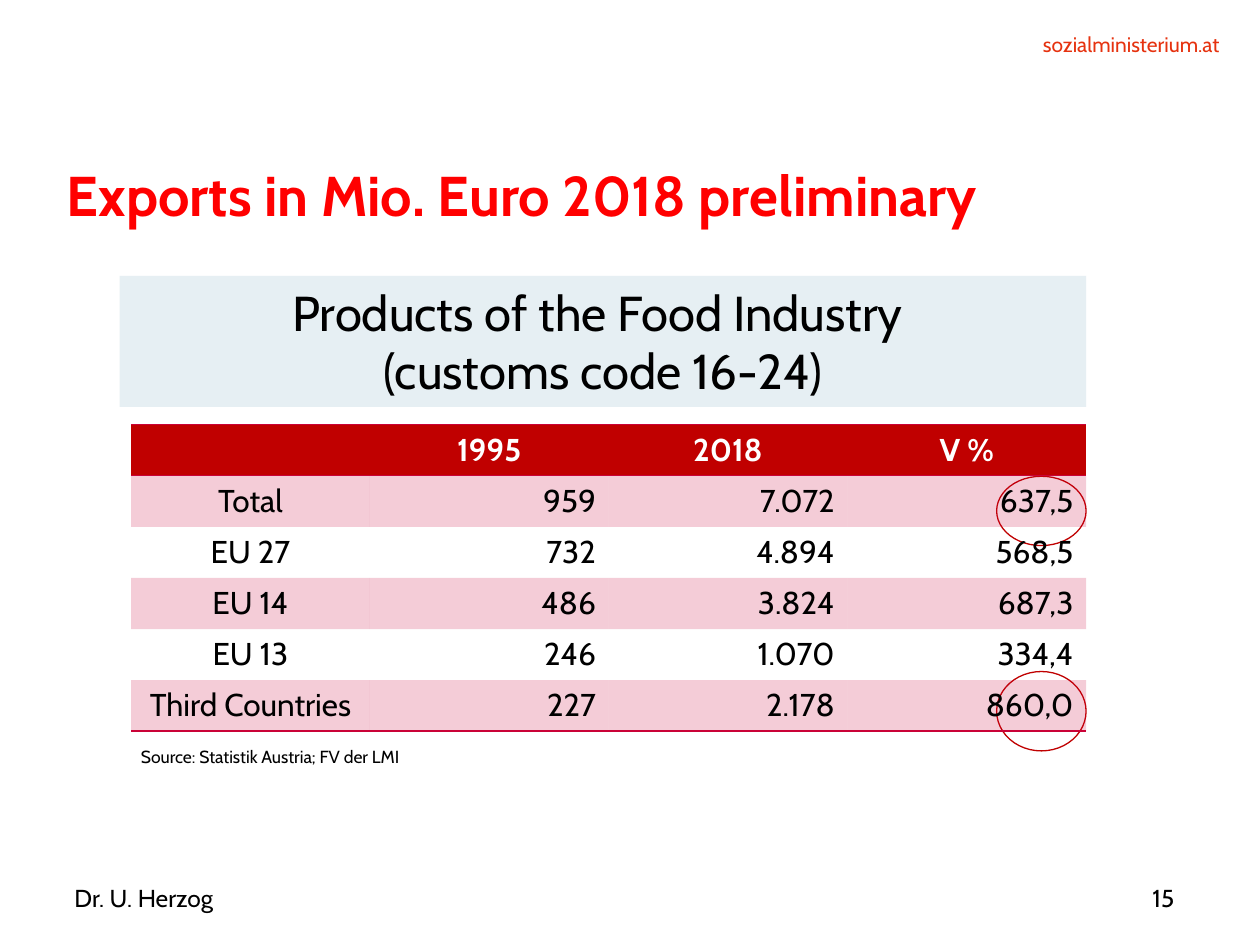
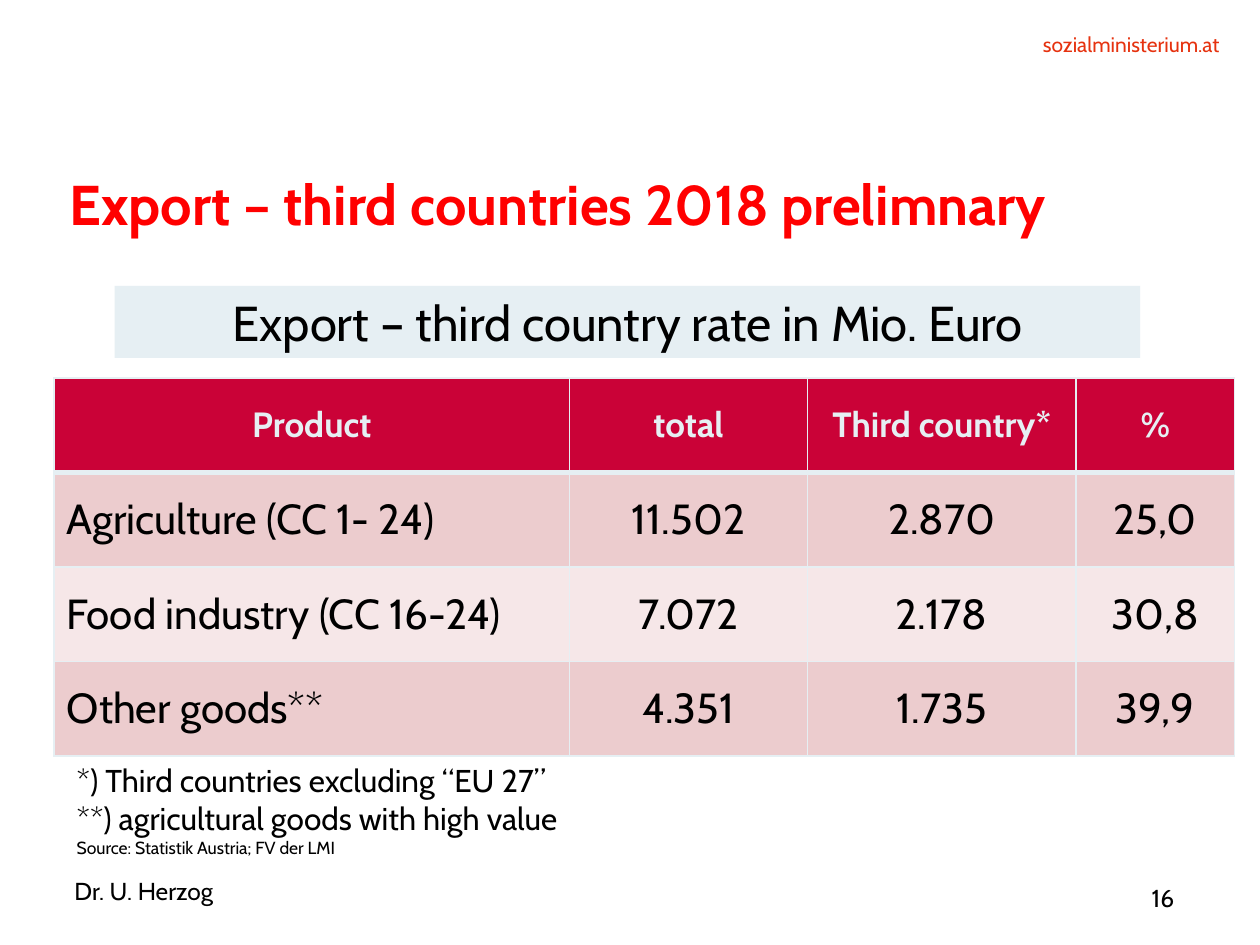
from lxml.etree import SubElement
from pptx import Presentation
from pptx.dml.color import RGBColor
from pptx.enum.shapes import MSO_SHAPE as Shape
from pptx.enum.text import MSO_ANCHOR as Anchor, MSO_AUTO_SIZE as AutoSize, PP_ALIGN as Align
from pptx.oxml.ns import qn
from pptx.util import Inches, Pt

COLORS = {
    "title": "FF0000",
    "web": "E6320F",
    "band": "E6EFF3",
    "dark_red": "C00000",
    "crimson": "CA0237",
    "rose": "ECCCCE",
    "pale_rose": "F6E7E8",
    "black": "000000",
    "white": "FFFFFF",
}
FONT = "Cabin"
NO_TABLE_STYLE = "{2D5ABB26-0587-4C30-8999-92F81FD0307C}"
NO_INSETS = dict.fromkeys(["margin_left", "margin_top", "margin_right", "margin_bottom"], 0)
FOOTER = {**NO_INSETS, "vertical_anchor": Anchor.MIDDLE, "word_wrap": True}
HEADER = {**NO_INSETS, "word_wrap": True}
NOTE = {"word_wrap": False}
SOURCE = ("Source: Statistik Austria; FV der LMI", 10)


def write(frame, lines, color="black", align=Align.LEFT, bold=False, settings={}):
    for name, value in settings.items():
        setattr(frame, name, value)
    for index, (text, size) in enumerate(lines):
        para = frame.add_paragraph() if index else frame.paragraphs[0]
        para.alignment = align
        span = para.add_run()
        span.text = text
        for name, value in {"name": FONT, "size": Pt(size), "bold": bold}.items():
            setattr(span.font, name, value)
        span.font.color.rgb = RGBColor.from_string(COLORS[color])


def style_cell(cell, fill, alpha, borders):
    properties = cell._tc.get_or_add_tcPr()
    for side in "LRTB":
        line = SubElement(properties, qn(f"a:ln{side}"))
        if side in borders:
            color, width = borders[side]
            line.set("w", str(Pt(width)))
            solid = SubElement(line, qn("a:solidFill"))
            SubElement(solid, qn("a:srgbClr"), val=COLORS[color])
        else:
            SubElement(line, qn("a:noFill"))
    if fill is None:
        cell.fill.background()
        return
    cell.fill.solid()
    cell.fill.fore_color.rgb = RGBColor.from_string(COLORS[fill])
    if alpha < 100:
        tint = properties.find(f"{qn('a:solidFill')}/{qn('a:srgbClr')}")
        SubElement(tint, qn("a:alpha"), val=str(alpha * 1000))


slides = [
    {
        "title": "Exports in Mio. Euro 2018 preliminary",
        "title_at": (0.53, 1.39),
        "rings": [(7.91, 3.78, 0.71, 0.55), (7.91, 5.33, 0.71, 0.63)],
        "band": ["Products of the Food Industry ", "(customs code 16-24)"],
        "band_at": (0.95, 2.19, 7.67, 1.04),
        "table_at": (1.04, 3.37),
        "columns": [1.895] * 4,
        "row_height": 0.405,
        "anchor": Anchor.TOP,
        "sizes": (18, 18),
        "head": ("dark_red", "white"),
        "stripes": [("crimson", 20), (None, 100)],
        "aligns": (Align.CENTER, Align.RIGHT),
        "head_borders": {"T": ("crimson", 1), "B": ("crimson", 1)},
        "body_borders": {},
        "last_borders": {"B": ("crimson", 1)},
        "rows": [
            ("", "1995", "2018", "V %"),
            ("Total", "959", "7.072", "637,5"),
            ("EU 27", "732", "4.894", "568,5"),
            ("EU 14", "486", "3.824", "687,3"),
            ("EU 13", "246", "1.070", "334,4"),
            ("Third Countries", "227", "2.178", "860,0"),
        ],
        "notes": [SOURCE],
        "notes_at": (1.02, 5.87, 2.29, 0.27),
        "author_top": 6.98,
        "number": "15",
    },
    {
        "title": "Export – third countries 2018 prelimnary",
        "title_at": (0.55, 1.46),
        "rings": [],
        "band": ["Export – third country rate in Mio. Euro"],
        "band_at": (0.91, 2.27, 8.14, 0.57),
        "table_at": (0.43, 3),
        "columns": [4.09, 1.89, 2.13, 1.26],
        "row_height": 0.75,
        "anchor": Anchor.MIDDLE,
        "sizes": (20, 24),
        "head": ("crimson", "band"),
        "stripes": [("rose", 100), ("pale_rose", 100)],
        "aligns": (Align.LEFT, Align.CENTER),
        "head_borders": {**dict.fromkeys("LRT", ("band", 1)), "B": ("band", 3)},
        "body_borders": dict.fromkeys("LRB", ("band", 1)),
        "last_borders": dict.fromkeys("LRB", ("band", 1)),
        "rows": [
            ("Product", "total", "Third country*", "%"),
            ("Agriculture (CC 1- 24)", "11.502", "2.870", "25,0"),
            ("Food industry (CC 16-24)", "7.072", "2.178", "30,8"),
            ("Other goods**", "4.351", "1.735", "39,9"),
        ],
        "notes": [
            ("*) Third countries excluding “EU 27”", 18),
            ("**) agricultural goods with high value", 18),
            SOURCE,
        ],
        "notes_at": (0.51, 5.99, 4.28, 0.88),
        "author_top": 6.92,
        "number": "16",
    },
]

deck = Presentation()
deck.slide_width, deck.slide_height = Inches(10), Inches(7.5)

for content in slides:
    page = deck.slides.add_slide(deck.slide_layouts[5])

    title = page.shapes.title
    title.left, title.top = map(Inches, content["title_at"])
    title.width, title.height = Inches(8.73), Inches(0.91)
    write(title.text_frame, [(content["title"], 32)], "title", bold=True,
          settings={**NO_INSETS, "vertical_anchor": Anchor.TOP,
                    "word_wrap": False, "auto_size": AutoSize.NONE})
    title.text_frame.paragraphs[0].line_spacing = Pt(30)

    for place in content["rings"]:
        ring = page.shapes.add_shape(Shape.OVAL, *map(Inches, place))
        ring.shadow.inherit = False
        ring.fill.background()
        ring.line.color.rgb = RGBColor.from_string(COLORS["dark_red"])
        ring.line.width = Pt(0.75)

    band = page.shapes.add_shape(Shape.RECTANGLE, *map(Inches, content["band_at"]))
    band.shadow.inherit = False
    band.fill.solid()
    band.fill.fore_color.rgb = RGBColor.from_string(COLORS["band"])
    band.line.fill.background()
    write(band.text_frame, [(line, 28) for line in content["band"]], align=Align.CENTER,
          settings={"vertical_anchor": Anchor.TOP, "word_wrap": True})

    rows, columns = content["rows"], content["columns"]
    left, top = content["table_at"]
    table = page.shapes.add_table(
        len(rows), len(columns), Inches(left), Inches(top),
        Inches(sum(columns)), Inches(content["row_height"] * len(rows))).table
    table._tbl.tblPr.find(qn("a:tableStyleId")).text = NO_TABLE_STYLE
    table.horz_banding = False
    for column, width in zip(table.columns, columns):
        column.width = Inches(width)
    for row_index, row in enumerate(rows):
        table.rows[row_index].height = Inches(content["row_height"])
        is_head = row_index == 0
        if is_head:
            (fill, color), alpha = content["head"], 100
            borders = content["head_borders"]
        else:
            fill, alpha = content["stripes"][(row_index - 1) % 2]
            color = "black"
            is_last = row_index == len(rows) - 1
            borders = content["last_borders" if is_last else "body_borders"]
        size = content["sizes"][0 if is_head else 1]
        for column_index, text in enumerate(row):
            cell = table.cell(row_index, column_index)
            style_cell(cell, fill, alpha, borders)
            cell.vertical_anchor = content["anchor"]
            align = Align.CENTER if is_head else content["aligns"][min(column_index, 1)]
            write(cell.text_frame, [(text, size)], color, align, is_head)

    labels = [
        ((7.27, 0.25, 2.41, 0.2), [("sozialministerium.at", 12)], "web", Align.RIGHT, HEADER),
        (content["notes_at"], content["notes"], "black", Align.LEFT, NOTE),
        ((0.59, content["author_top"], 7.52, 0.29), [("Dr. U. Herzog", 14)],
         "black", Align.LEFT, FOOTER),
        ((8.27, 6.98, 1.05, 0.29), [(content["number"], 14)], "black", Align.RIGHT, FOOTER),
    ]
    for place, lines, color, align, settings in labels:
        box = page.shapes.add_textbox(*map(Inches, place))
        write(box.text_frame, lines, color, align, settings=settings)

deck.save("out.pptx")
